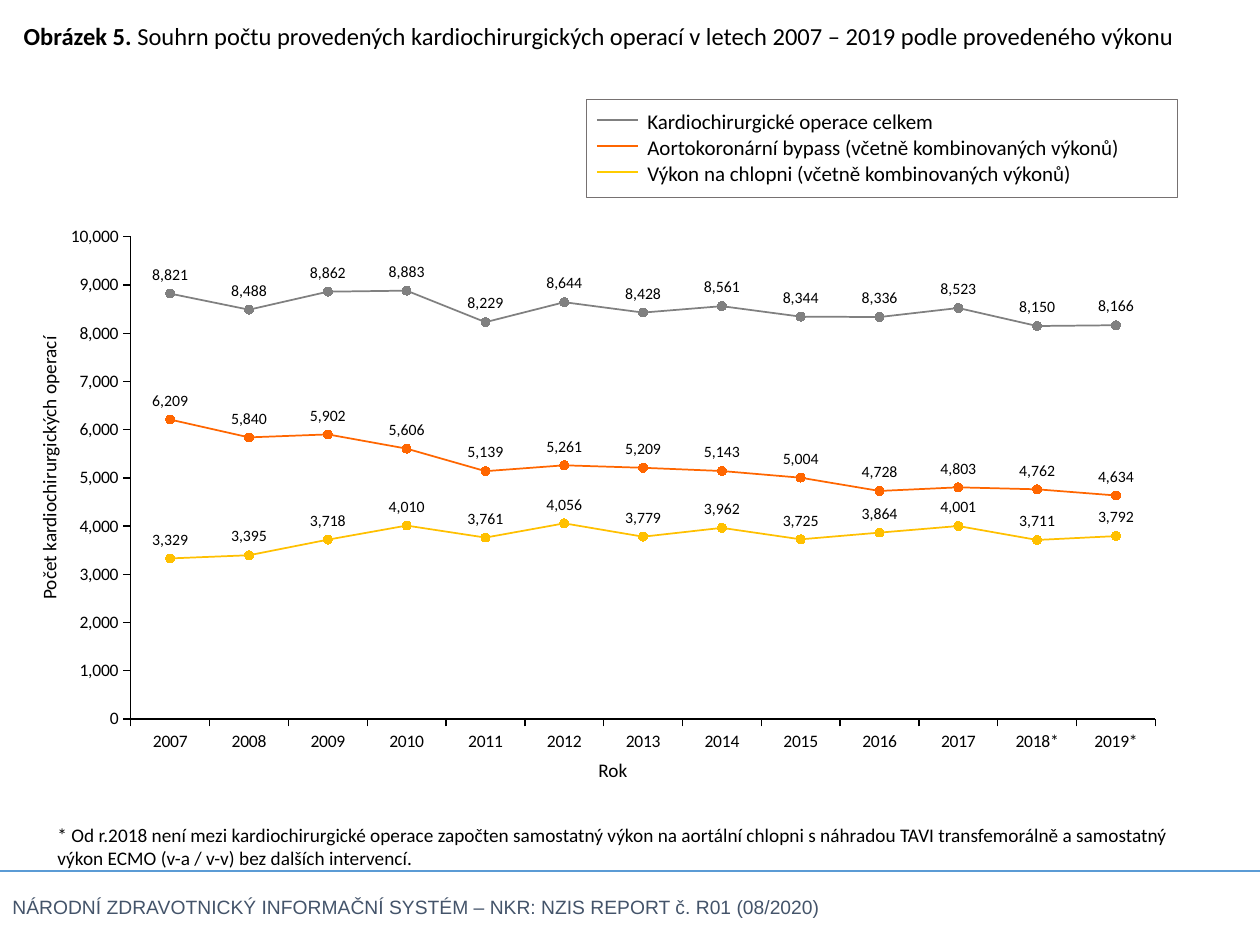
from dataclasses import dataclass
from lxml import etree
from pptx import Presentation
from pptx.chart.data import CategoryChartData as ChartData
from pptx.dml.color import RGBColor as Rgb
from pptx.enum.chart import XL_CHART_TYPE as Kind, XL_LABEL_POSITION as Pos
from pptx.enum.chart import XL_MARKER_STYLE as Mark, XL_TICK_MARK as Tick
from pptx.enum.shapes import MSO_CONNECTOR as Conn, MSO_SHAPE as Shape
from pptx.enum.text import MSO_ANCHOR as Anchor, MSO_AUTO_SIZE as Fit, PP_ALIGN as Align
from pptx.oxml.ns import qn
from pptx.util import Emu, Pt


@dataclass
class Theme:
    face: str = "Calibri"
    foot_face: str = "Arial"
    ink: str = "000000"
    foot: str = "44546A"
    rule: str = "5B9BD5"
    frame: str = "767171"
    head: int = 14
    key: int = 12
    note: int = 11
    axis: int = 10
    label: int = 9


theme = Theme()
PX = 914400 / 126


def px(*vals):
    return [Emu(round(v * PX)) for v in vals]


def style(font, size, color=theme.ink, face=theme.face):
    font.size, font.name = Pt(size), face
    font.color.rgb = Rgb.from_string(color)


prs = Presentation()
prs.slide_width, prs.slide_height = px(1260, 945)
slide = prs.slides.add_slide(prs.slide_layouts[5])
shapes = slide.shapes

# Title
title = shapes.title
title.left, title.top, title.width, title.height = px(11, 15, 1221, 43)
frame = title.text_frame
frame.auto_size, frame.vertical_anchor = Fit.NONE, Anchor.TOP
para = frame.paragraphs[0]
para.alignment = Align.LEFT
for text, bold in (
    ("Obrázek 5. ", True),
    ("Souhrn počtu provedených kardiochirurgických operací v letech "
     "2007 – 2019 podle provedeného výkonu", False),
):
    run = para.add_run()
    run.text = text
    style(run.font, theme.head)
    run.font.bold = bold

# Chart data: name, line colour, legend colour, values
series = [
    ("Kardiochirurgické operace celkem", "808080", "808080",
     (8821, 8488, 8862, 8883, 8229, 8644, 8428, 8561, 8344, 8336, 8523, 8150, 8166)),
    ("Aortokoronární bypass (včetně kombinovaných výkonů)", "FF6600", "FF6600",
     (6209, 5840, 5902, 5606, 5139, 5261, 5209, 5143, 5004, 4728, 4803, 4762, 4634)),
    ("Výkon na chlopni (včetně kombinovaných výkonů)", "FFC000", "FFCC00",
     (3329, 3395, 3718, 4010, 3761, 4056, 3779, 3962, 3725, 3864, 4001, 3711, 3792)),
]
data = ChartData(number_format="#,##0")
data.categories = [str(y) + ("*" if y > 2017 else "") for y in range(2007, 2020)]
for name, _, _, vals in series:
    data.add_series(name, vals)

# Line chart
chart = shapes.add_chart(Kind.LINE_MARKERS, *px(52, 204, 1126, 548), data).chart
chart.has_legend = chart.has_title = False
style(chart.font, theme.axis)
for plot, (_, color, _, _) in zip(chart.plots[0].series, series):
    tint = Rgb.from_string(color)
    plot.smooth = False
    plot.format.line.width = Pt(1)
    plot.format.line.color.rgb = tint
    mark = plot.marker
    mark.style, mark.size = Mark.CIRCLE, 5
    mark.format.fill.solid()
    mark.format.fill.fore_color.rgb = tint
    mark.format.line.color.rgb = tint
    labels = plot.data_labels
    labels.show_value, labels.position = True, Pos.ABOVE
    labels.number_format, labels.number_format_is_linked = "#,##0", False
    style(labels.font, theme.label)

# Axes
for axis in (chart.category_axis, chart.value_axis):
    axis.has_major_gridlines = False
    axis.major_tick_mark, axis.minor_tick_mark = Tick.OUTSIDE, Tick.NONE
    axis.format.line.width = Pt(0.75)
    axis.format.line.color.rgb = Rgb.from_string(theme.ink)
    style(axis.tick_labels.font, theme.axis)
axis.minimum_scale, axis.maximum_scale, axis.major_unit = 0, 10000, 1000
axis.tick_labels.number_format = "#,##0"
axis.tick_labels.number_format_is_linked = False

# Inner plot area
area = chart.element.find(".//" + qn("c:plotArea"))
for old in area.findall(qn("c:layout")):
    area.remove(old)
layout = etree.Element(qn("c:layout"))
manual = etree.SubElement(layout, qn("c:manualLayout"))
for tag, val in (("layoutTarget", "inner"), ("xMode", "edge"), ("yMode", "edge"),
                 ("x", "0.07"), ("y", "0.06"), ("w", "0.91"), ("h", "0.88")):
    etree.SubElement(manual, qn("c:" + tag)).set("val", val)
area.insert(0, layout)

# Legend frame
box = shapes.add_shape(Shape.RECTANGLE, *px(586, 99, 592, 99))
box.shadow.inherit = False
box.fill.background()
box.line.width = Pt(0.5)
box.line.color.rgb = Rgb.from_string(theme.frame)

# Legend keys and the footer rule
rules = [(597, 120 + 26 * i, 638, row[2]) for i, row in enumerate(series)]
rules.append((0, 871, 1260, theme.rule))
for left, y, right, color in rules:
    line = shapes.add_connector(Conn.STRAIGHT, *px(left, y, right, y))
    line.line.width = Pt(1)
    line.line.color.rgb = Rgb.from_string(color)
    etree.SubElement(line.element.spPr, qn("a:effectLst"))

# Texts: place, words, size, colour, face, wrap, turn
texts = [((635, 102 + 26 * i, 502, 38), row[0], theme.key, theme.ink, theme.face, False, 0)
         for i, row in enumerate(series)]
for place, words, turn in (
    ((586, 752, 66, 37), "Rok", 0),
    ((-99, 445, 297, 37), "Počet kardiochirurgických operací", 270),
    ((45, 817, 1168, 59),
     "* Od r.2018 není mezi kardiochirurgické operace započten samostatný výkon na "
     "aortální chlopni s náhradou TAVI transfemorálně a samostatný výkon ECMO "
     "(v-a / v-v) bez dalších intervencí.", 0),
):
    texts.append((place, words, theme.note, theme.ink, theme.face, True, turn))
texts.append(((0, 888, 1019, 35),
              "NÁRODNÍ ZDRAVOTNICKÝ INFORMAČNÍ SYSTÉM – NKR: NZIS REPORT č. R01 (08/2020)",
              theme.note, theme.foot, theme.foot_face, True, 0))
for place, words, size, color, face, wrap, turn in texts:
    area = shapes.add_textbox(*px(*place))
    area.rotation = turn
    frame = area.text_frame
    frame.word_wrap = wrap
    frame.text = words
    para = frame.paragraphs[0]
    style(para.runs[0].font, size, color, face)

# Footer spacing
para.line_spacing, para.space_after = 1.07, Pt(8)

prs.save("out.pptx")
